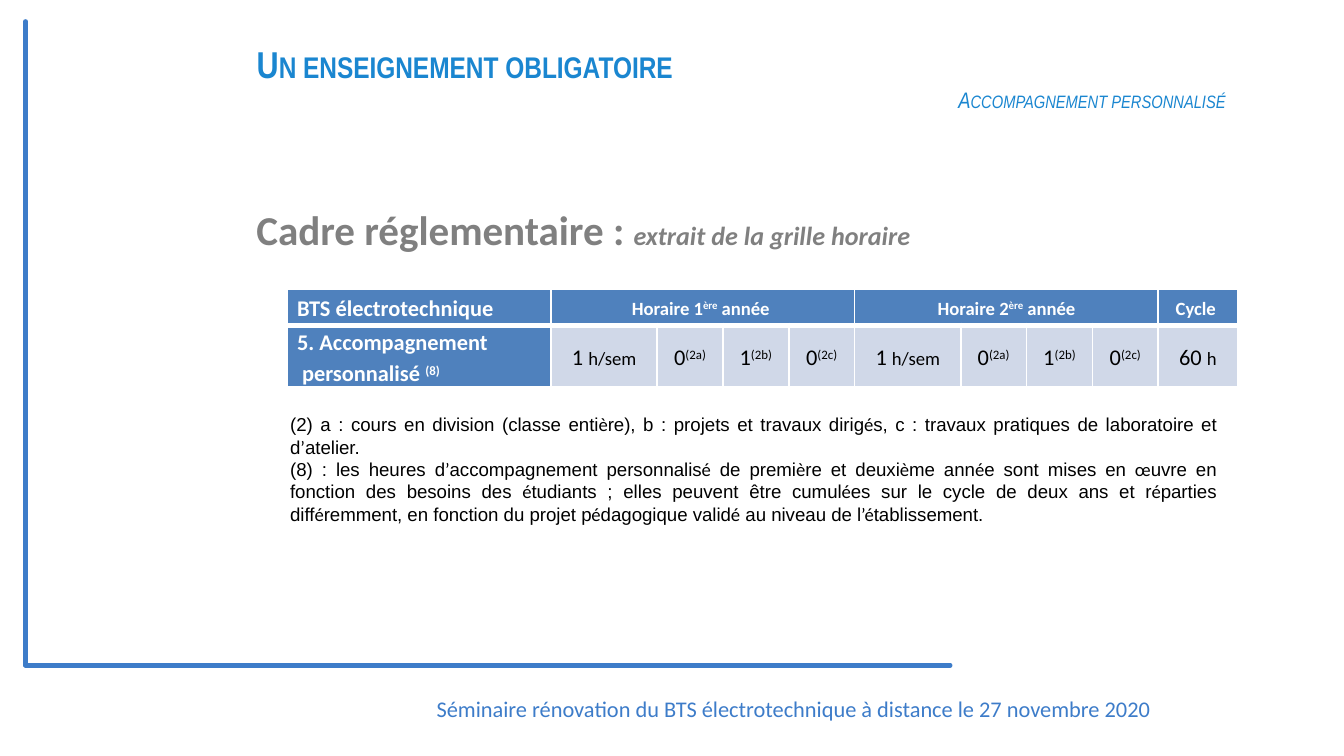
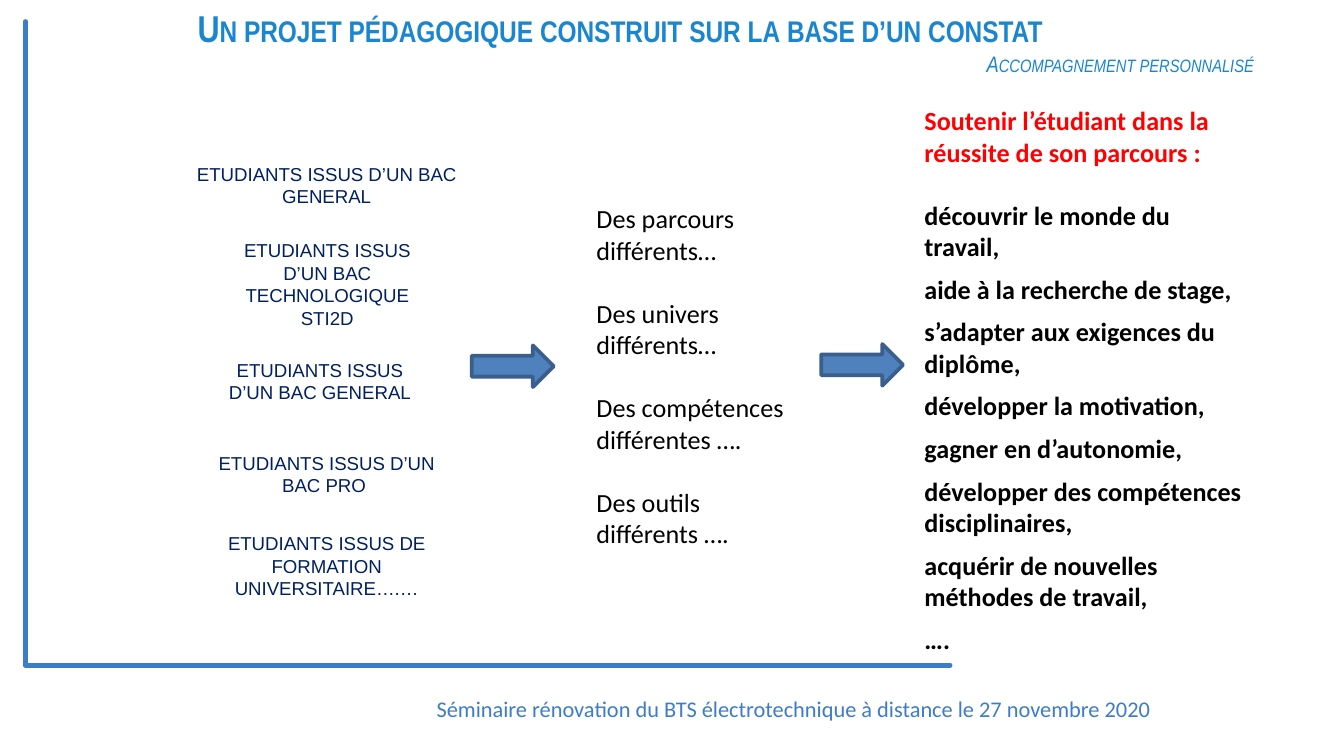
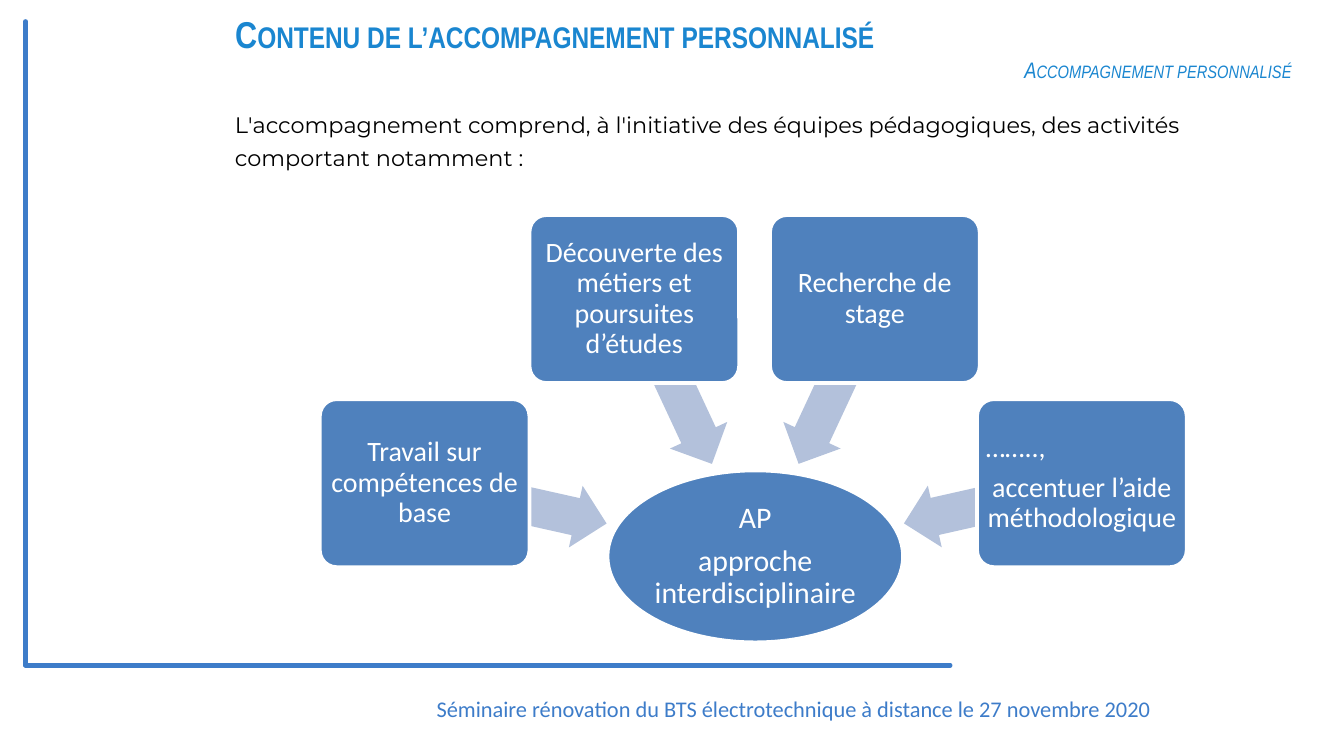
from itertools import groupby
from lxml.etree import SubElement
from pptx import Presentation
from pptx.dml.color import RGBColor
from pptx.enum.shapes import MSO_CONNECTOR, MSO_SHAPE
from pptx.enum.text import MSO_ANCHOR, MSO_AUTO_SIZE, PP_ALIGN
from pptx.oxml.ns import qn
from pptx.util import Inches, Pt

FRAME = RGBColor(0x3D, 0x7C, 0xC9)
TITLE = RGBColor(0x1A, 0x86, 0xD0)
BLUE = RGBColor(0x4F, 0x81, 0xBD)
EDGE = RGBColor(0x3A, 0x5F, 0x8C)
PALE = RGBColor(0xD0, 0xD8, 0xE8)
ARROW = RGBColor(0xB3, 0xC1, 0xDB)
NAVY = RGBColor(0x00, 0x20, 0x60)
GRAY = RGBColor(0x80, 0x80, 0x80)
RED = RGBColor(0xFF, 0x00, 0x00)
BLACK = RGBColor(0x00, 0x00, 0x00)
WHITE = RGBColor(0xFF, 0xFF, 0xFF)


def write(par, text, size, color, face="Calibri", bold=False, italic=False):
    run = par.add_run()
    run.text = text
    font = run.font
    font.name, font.size = face, Pt(size)
    font.bold, font.italic = bold, italic
    font.color.rgb = color
    return run._r.get_or_add_rPr()


def add_box(slide, left, top, width, height):
    box = slide.shapes.add_textbox(Inches(left), Inches(top), Inches(width), Inches(height))
    box.text_frame.word_wrap = True
    return box


prs = Presentation()
prs.slide_width, prs.slide_height = Inches(10), Inches(10 * 9 / 16)
layout = prs.slide_layouts[5]

slides = []
for name, left, top, width in [
    ("Un enseignement obligatoire", 1.81, 0.55, 7.41),
    ("Un projet pédagogique construit sur la base d’un constat", 1.37, 0.28, 8.06),
    ("Contenu de l’accompagnement personnalisé", 1.65, 0.33, 8.06),
]:
    slide = prs.slides.add_slide(layout)
    slides.append(slide)
    title = slide.shapes.title
    title.left, title.top = Inches(left), Inches(top)
    title.width, title.height = Inches(width), Inches(0.39)
    frame = title.text_frame
    frame.auto_size = MSO_AUTO_SIZE.NONE
    frame.vertical_anchor = MSO_ANCHOR.BOTTOM
    frame.margin_top, frame.margin_bottom = 0, Inches(0.1)
    head, sub = frame.paragraphs[0], frame.add_paragraph()
    head.alignment, sub.alignment = PP_ALIGN.LEFT, PP_ALIGN.RIGHT
    write(head, name, 20, TITLE, "Arial Narrow", bold=True).set("cap", "small")
    write(sub, "Accompagnement personnalisé", 12, TITLE, "Arial Narrow", italic=True).set("cap", "small")

grid, path_slide, content = slides

shared = []
for x, y in [(7.07, 4.95), (0.19, 0.16)]:
    line = grid.shapes.add_connector(
        MSO_CONNECTOR.STRAIGHT, Inches(0.19), Inches(4.95), Inches(x), Inches(y))
    line.line.color.rgb, line.line.width = FRAME, Pt(2.5)
    line._element.spPr.find(qn("a:ln")).set("cap", "rnd")
    SubElement(line._element.spPr, qn("a:effectLst"))
    shared.append(line)
footer = add_box(grid, 3.15, 5.12, 5.66, 0.3)
write(footer.text_frame.paragraphs[0],
      "Séminaire rénovation du BTS électrotechnique à distance le 27 novembre 2020", 12, FRAME)
shared.append(footer)
for num, shape in enumerate(shared, 101):
    shape._element.xpath(".//p:cNvPr")[0].set("id", str(num))
    layout.shapes._spTree.append(shape._element)

par = add_box(grid, 1.81, 1.47, 7.52, 2.81).text_frame.paragraphs[0]
write(par, "Cadre réglementaire : ", 22, GRAY, bold=True)
write(par, "extrait de la grille horaire", 14, GRAY, bold=True, italic=True)

year = [
    [("1 ", 12, 0), ("h/sem", 10, 0)],
    [("0", 12, 0), ("(2a)", 12, 30)],
    [("1", 12, 0), ("(2b)", 12, 30)],
    [("0", 12, 0), ("(2c)", 12, 30)],
]
rows = [
    [[("BTS électrotechnique", 12, 0)],
     [("Horaire 1", 10, 0), ("ère", 10, 30), (" année ", 10, 0)], [], [], [],
     [("Horaire 2", 10, 0), ("ère", 10, 30), (" année", 10, 0)], [], [], [],
     [("Cycle ", 10, 0)]],
    [[("5. Accompagnement", 12, 0)], *year, *year, [("60 ", 12, 0), ("h", 10, 0)]],
]
table = grid.shapes.add_table(2, 10, Inches(2.14), Inches(2.15), Inches(7.09), Inches(0.73)).table
widths = [1.96] + [0.79, 0.49, 0.49, 0.49] * 2 + [0.59]
for col, width in zip(table.columns, widths):
    col.width = Inches(width)
table.rows[0].height, table.rows[1].height = Inches(0.27), Inches(0.46)
for start in (1, 5):
    table.cell(0, start).merge(table.cell(0, start + 3))
for r, row in enumerate(rows):
    for c, parts in enumerate(row):
        cell = table.cell(r, c)
        cell.margin_left = cell.margin_right = Inches(0.07)
        cell.margin_top = cell.margin_bottom = 0
        cell.vertical_anchor = MSO_ANCHOR.MIDDLE
        thick = "lnB" if r == 0 else "lnT"
        for side in ("lnL", "lnR", "lnT", "lnB"):
            edge = SubElement(cell._tc.get_or_add_tcPr(), qn("a:" + side),
                              w=str(Pt(3 if side == thick else 1)))
            SubElement(SubElement(edge, qn("a:solidFill")), qn("a:srgbClr"), val=str(WHITE))
        strong = r == 0 or c == 0
        cell.fill.solid()
        cell.fill.fore_color.rgb = BLUE if strong else PALE
        frame = cell.text_frame
        lines = [parts]
        if (r, c) == (1, 0):
            lines.append([(" personnalisé ", 12, 0), ("(8)", 12, 30)])
            frame.add_paragraph()
        for par, words in zip(frame.paragraphs, lines):
            par.line_spacing = 1.15
            par.alignment = PP_ALIGN.CENTER if c else PP_ALIGN.JUSTIFY
            if c == 0:
                props = par._p.get_or_add_pPr()
                props.set("marL", str(Inches(0.16)))
                props.set("indent", str(-Inches(0.16)))
            for text, size, raised in words:
                props = write(par, text, size, WHITE if strong else BLACK, bold=strong)
                if raised:
                    props.set("baseline", str(raised * 1000))

notes = [
    "(2) a : cours en division (classe entière), b : projets et travaux dirigés, "
    "c : travaux pratiques de laboratoire et d’atelier.",
    "(8) : les heures d’accompagnement personnalisé de première et deuxième année sont mises "
    "en œuvre en fonction des besoins des étudiants ; elles peuvent être cumulées sur le cycle "
    "de deux ans et réparties différemment, en fonction du projet pédagogique validé au niveau "
    "de l’établissement. ",
]
frame = add_box(grid, 2.06, 3.02, 7.09, 0.94).text_frame
frame.vertical_anchor = MSO_ANCHOR.MIDDLE
frame.add_paragraph()
for par, note in zip(frame.paragraphs, notes):
    par.alignment = PP_ALIGN.JUSTIFY
    for special, chars in groupby(note, lambda char: char in "éè’œ"):
        write(par, "".join(chars), 10, BLACK, "Calibri" if special else "Arial")

for text, left, top, width, height in [
    ("ETUDIANTS ISSUS D’UN BAC GENERAL", 1.24, 1.16, 2.38, 0.41),
    ("ETUDIANTS ISSUS D’UN BAC TECHNOLOGIQUE STI2D", 1.6, 1.73, 1.67, 0.73),
    ("ETUDIANTS ISSUS D’UN BAC GENERAL", 1.51, 2.62, 1.74, 0.41),
    ("ETUDIANTS ISSUS D’UN BAC PRO ", 1.45, 3.31, 1.96, 0.41),
    ("ETUDIANTS ISSUS DE FORMATION UNIVERSITAIRE….…", 1.47, 3.91, 1.92, 0.57),
]:
    par = add_box(path_slide, left, top, width, height).text_frame.paragraphs[0]
    par.alignment = PP_ALIGN.CENTER
    write(par, text, 10, NAVY, "Arial")

frame = add_box(path_slide, 4.34, 1.46, 1.77, 2.54).text_frame
for i, text in enumerate([
    "Des parcours différents…",
    "Des univers différents…",
    "Des compétences différentes ….",
    "Des outils différents ….",
]):
    par = frame.add_paragraph() if i else frame.paragraphs[0]
    if i:
        par.space_before = Pt(17)
    write(par, text, 14, BLACK)

frame = add_box(path_slide, 6.78, 0.73, 2.57, 3.98).text_frame
write(frame.paragraphs[0], "Soutenir l’étudiant dans la réussite de son parcours :", 14, RED, bold=True)
for i, text in enumerate([
    "découvrir le monde du travail,",
    "aide à la recherche de stage,",
    "s’adapter aux exigences du diplôme,",
    "développer la motivation,",
    "gagner en d’autonomie,",
    "développer des compétences disciplinaires,",
    "acquérir de nouvelles méthodes de travail,",
    "….",
]):
    par = frame.add_paragraph()
    if i == 0:
        par.space_before = Pt(17)
    par.space_after = Pt(6)
    write(par, text, 14, BLACK, bold=True)

for left, top in [(3.51, 2.57), (6.11, 2.56)]:
    arrow = path_slide.shapes.add_shape(
        MSO_SHAPE.RIGHT_ARROW, Inches(left), Inches(top), Inches(0.61), Inches(0.31))
    arrow.shadow.inherit = False
    arrow.fill.solid()
    arrow.fill.fore_color.rgb = BLUE
    arrow.line.color.rgb, arrow.line.width = EDGE, Pt(2)

par = add_box(content, 1.65, 0.74, 8.06, 0.65).text_frame.paragraphs[0]
par.line_spacing = 1.2
write(par, "L'accompagnement comprend, à l'initiative des équipes pédagogiques, "
      "des activités comportant notamment :", 12, BLACK, "Montserrat")

OVAL, ROUND = MSO_SHAPE.OVAL, MSO_SHAPE.ROUNDED_RECTANGLE
for kind, left, top, width, height, size, inset, texts, arrow_at in [
    (OVAL, 4.52, 3.5, 2.2, 1.28, 16, 0.01, ["AP", "approche interdisciplinaire"], None),
    (ROUND, 2.38, 2.97, 1.56, 1.25, 15, 0.03, ["Travail sur compétences de base"],
     (3.15, 3.51, 1.38, 192.6)),
    (ROUND, 3.94, 1.6, 1.56, 1.25, 15, 0.03, ["Découverte des métiers et poursuites d’études"],
     (4.33, 2.6, 1.36, 245)),
    (ROUND, 5.73, 1.6, 1.56, 1.25, 15, 0.03, ["Recherche de stage"], (5.55, 2.6, 1.36, 295)),
    (ROUND, 7.27, 2.97, 1.56, 1.25, 15, 0.03, ["……..,", "accentuer l’aide méthodologique "],
     (6.71, 3.51, 1.36, 347.3)),
]:
    if arrow_at:
        x, y, span, turn = arrow_at
        arrow = content.shapes.add_shape(
            MSO_SHAPE.LEFT_ARROW, Inches(x), Inches(y), Inches(span), Inches(0.47))
        arrow.adjustments[0], arrow.adjustments[1] = 0.6, 0.5
        arrow.rotation = turn
        arrow.shadow.inherit = False
        arrow.fill.solid()
        arrow.fill.fore_color.rgb = ARROW
        arrow.line.fill.background()
    node = content.shapes.add_shape(kind, Inches(left), Inches(top), Inches(width), Inches(height))
    if kind == ROUND:
        node.adjustments[0] = 0.1
    node.shadow.inherit = False
    node.fill.solid()
    node.fill.fore_color.rgb = BLUE
    node.line.color.rgb, node.line.width = WHITE, Pt(2)
    frame = node.text_frame
    frame.word_wrap = True
    frame.margin_left = frame.margin_right = Inches(inset)
    frame.margin_top = frame.margin_bottom = Inches(inset)
    for i, text in enumerate(texts):
        par = frame.add_paragraph() if i else frame.paragraphs[0]
        par.alignment = PP_ALIGN.LEFT if text.startswith("…") else PP_ALIGN.CENTER
        par.line_spacing = 0.9
        par.space_after = Pt(size * 0.35)
        write(par, text, size, WHITE)

prs.save("out.pptx")
